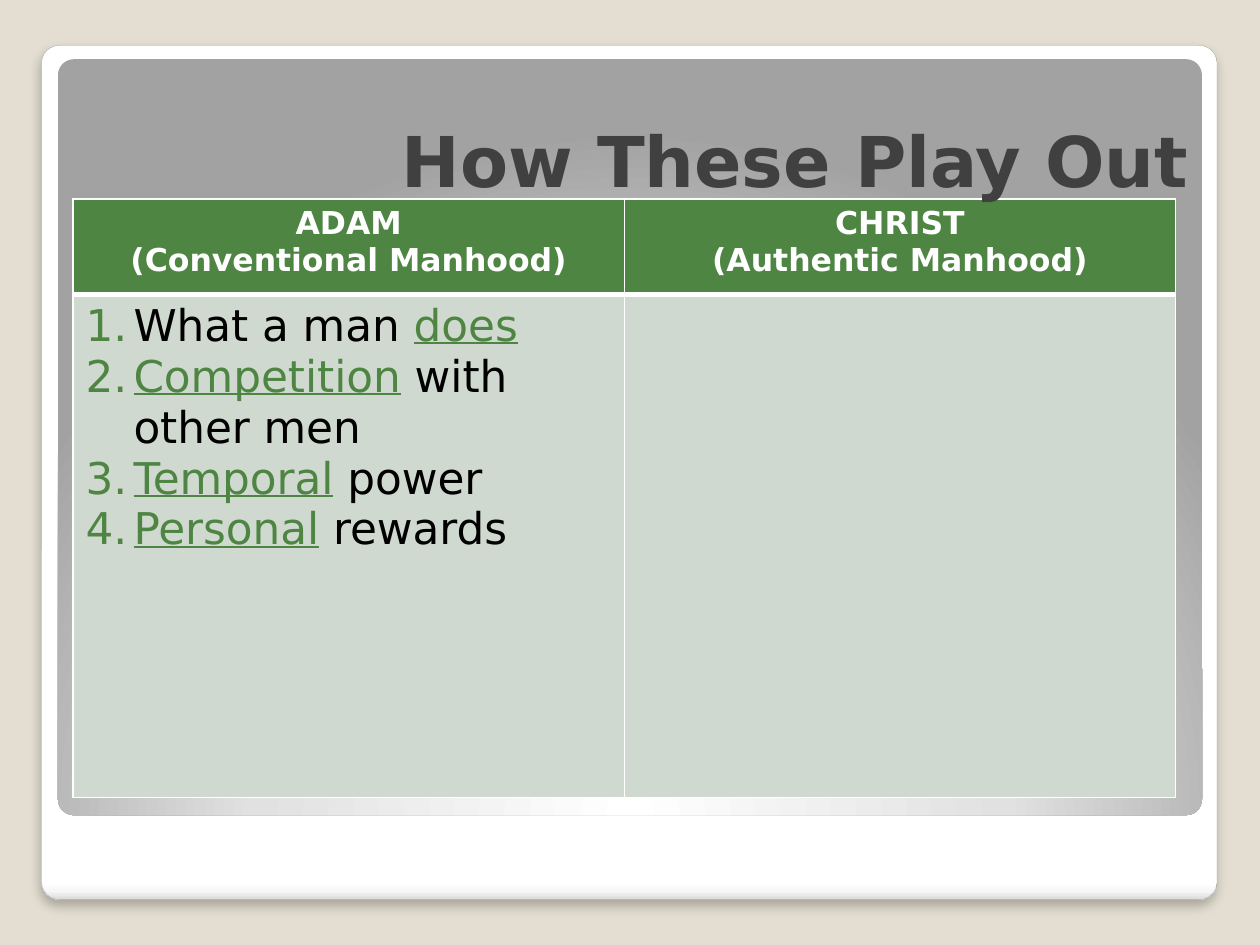
from lxml import etree
from pptx import Presentation
from pptx.dml.color import RGBColor as RGB
from pptx.enum.shapes import MSO_SHAPE as SHAPE
from pptx.enum.text import MSO_ANCHOR as ANCHOR, MSO_AUTO_SIZE as FIT, PP_ALIGN as ALIGN
from pptx.oxml import parse_xml
from pptx.util import Inches as In, Pt

NS = 'xmlns:a="http://schemas.openxmlformats.org/drawingml/2006/main"'
HUE = {"sand": "E3DED1", "edge": "A4A4A4", "green": "4E8542", "mint": "D0D9CF",
       "white": "FFFFFF", "black": "000000", "title": "404040"}
CARD = [(0, "FFFFFF"), (98, "FFFFFF"), (99, "F7F7F7"), (100, "DADADA")]
GLOW = [(0, "FFFFFF"), (55, "E1E1E1"), (100, "A2A2A2")]
HEADS = ["ADAM\n(Conventional Manhood)", "CHRIST\n(Authentic Manhood)"]
# Words between underscores are the underlined key words.
ITEMS = ["What a man _does_", "_Competition_ with other men",
         "_Temporal_ power", "_Personal_ rewards"]


def style(run, size, hue, bold=False):
    font = run.font
    font.name, font.size, font.bold = "DejaVu Sans", Pt(size), bold
    font.color.rgb = RGB.from_string(HUE[hue])


def panel(box, stops, shade):
    """Add a rounded panel with a gradient fill; shade is the gradient's direction."""
    shape = slide.shapes.add_shape(SHAPE.ROUNDED_RECTANGLE, *map(In, box))
    shape.adjustments[0] = 0.021
    shape.shadow.inherit = False
    shape.line.fill.background()
    marks = "".join(f'<a:gs pos="{pos * 1000}"><a:srgbClr val="{hue}"/></a:gs>'
                    for pos, hue in stops)
    fill = parse_xml(f'<a:gradFill {NS} rotWithShape="1"><a:gsLst>{marks}</a:gsLst>'
                     f'{shade}</a:gradFill>')
    shape.element.spPr.insert(2, fill)
    return shape


prs = Presentation()
prs.slide_width, prs.slide_height = In(10), In(7.5)
slide = prs.slides.add_slide(prs.slide_layouts[5])
back = slide.background.fill
back.solid()
back.fore_color.rgb = RGB.from_string(HUE["sand"])

# Card and inner glow
card = panel((0.33, 0.36, 9.33, 6.78), CARD, '<a:lin ang="5400000" scaled="0"/>')
card.line.color.rgb = RGB.from_string(HUE["edge"])
card.line.width = Pt(0.16)
effect = card.element.spPr.find("{*}effectLst")
effect.append(parse_xml(
    f'<a:outerShdw {NS} blurRad="{Pt(6)}" dist="{Pt(4)}" dir="5400000" rotWithShape="0">'
    f'<a:srgbClr val="{HUE["black"]}"><a:alpha val="25000"/></a:srgbClr></a:outerShdw>'))
panel((0.46, 0.47, 9.08, 6), GLOW,
      '<a:path path="circle"><a:fillToRect l="50000" t="175000" r="50000" b="-75000"/></a:path>')

# Table
frame = slide.shapes.add_table(2, 2, In(0.58), In(1.58), In(8.75), In(4.75))
table = frame.table
table.rows[0].height, table.rows[1].height = In(0.76), In(3.99)
for row, hue in enumerate(["green", "mint"]):
    for cell in table.rows[row].cells:
        cell.fill.solid()
        cell.fill.fore_color.rgb = RGB.from_string(HUE[hue])
        props = cell._tc.get_or_add_tcPr()
        for spot, side in enumerate("LRTB"):
            # A thick rule parts the header from the body.
            thick = (row, side) in [(0, "B"), (1, "T")]
            props.insert(spot, parse_xml(
                f'<a:ln{side} {NS} w="{Pt(3 if thick else 1)}"><a:solidFill>'
                f'<a:srgbClr val="{HUE["white"]}"/></a:solidFill></a:ln{side}>'))

for cell, head in zip(table.rows[0].cells, HEADS):
    cell.text_frame.text = head
    for para in cell.text_frame.paragraphs:
        para.alignment = ALIGN.CENTER
        style(para.runs[0], 18, "white", True)

body = table.cell(1, 0).text_frame
body.text = "\n".join(ITEMS)
for para, item in zip(body.paragraphs, ITEMS):
    para.text = ""
    for spot, part in enumerate(item.split("_")):
        if part:
            run = para.add_run()
            run.text = part
            key = spot % 2 == 1
            style(run, 25, "green" if key else "black")
            run.font.underline = key
    props = para._p.get_or_add_pPr()
    props.set("marL", str(In(0.38)))
    props.set("indent", str(-In(0.38)))
    for mark in (f'<a:buClr {NS}><a:srgbClr val="{HUE["green"]}"/></a:buClr>',
                 f'<a:buFont {NS} typeface="+mj-lt"/>',
                 f'<a:buAutoNum {NS} type="arabicPeriod"/>'):
        props.append(etree.fromstring(mark))

# Title, in front of the table
title = slide.shapes.title
title.left, title.top, title.width, title.height = map(In, (0.58, 0.5, 8.95, 1.15))
text = title.text_frame
text.text = "How These Play Out"
text.auto_size = FIT.NONE
text.vertical_anchor = ANCHOR.BOTTOM
text.paragraphs[0].alignment = ALIGN.RIGHT
style(text.paragraphs[0].runs[0], 40, "title", True)
frame.element.addnext(title.element)

prs.save("out.pptx")
